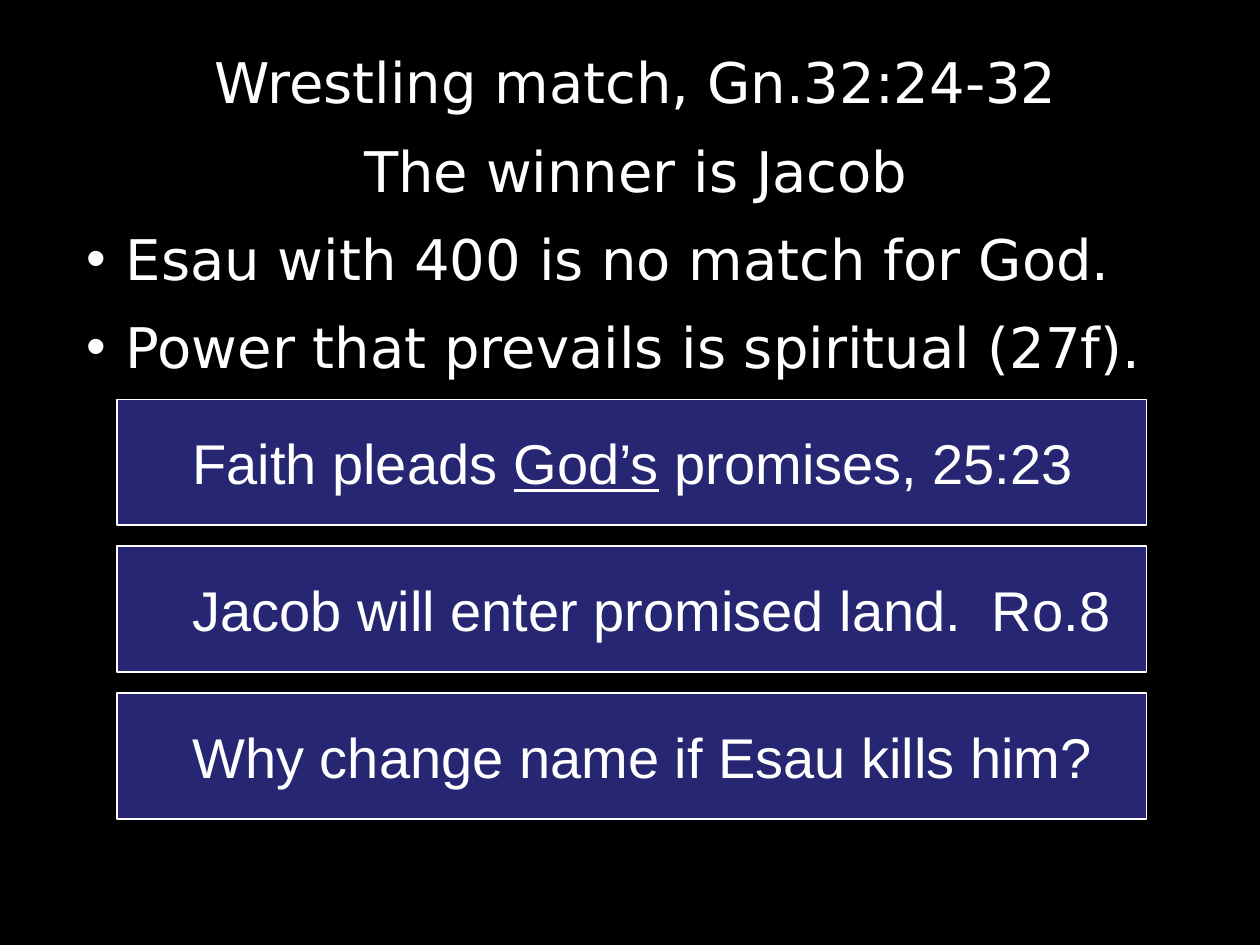
from pptx import Presentation, util as u
from pptx.dml.color import RGBColor
from pptx.enum import shapes, text
from lxml import etree

# Content: heading lines, bullets, and boxes as (words, underlined) runs
HEADINGS = ["Wrestling match, Gn.32:24-32", "The winner is Jacob"]
BULLETS = ["Esau with 400 is no match for God.",
           "Power that prevails is spiritual (27f)."]
BOXES = [
    [("Faith pleads ", False), ("God’s", True), (" promises, 25:23", False)],
    [("Jacob will enter promised land.  Ro.8", False)],
    [("Why change name if Esau kills him?", False)],
]

# Format
COLORS = {"back": "000000", "box": "262673", "ink": "FFFFFF"}
COLORS = {k: RGBColor.from_string(v) for k, v in COLORS.items()}
W, H = u.Inches(10), u.Inches(7.5)
BOX_LEFT, BOX_TOP, BOX_WIDTH = 0.93, 3.17, 8.17
BOX_HEIGHT, BOX_PITCH = 1, 3.5 / 3
SPACING = {"space_before": u.Pt(6), "space_after": u.Pt(6)}


def write(p, runs, font, align, margin, indent=0, bullet=None):
    for name, value in SPACING.items():
        setattr(p, name, value)
    p.alignment = align
    pPr = p._p.get_or_add_pPr()
    pPr.set("marL", str(u.Inches(margin)))
    pPr.set("indent", str(u.Inches(indent)))
    if bullet:
        ns = pPr.nsmap["a"]
        etree.SubElement(pPr, f"{{{ns}}}buFont", typeface="Arial")
        etree.SubElement(pPr, f"{{{ns}}}buChar", char=bullet)
    for words, underline in runs:
        r = p.add_run()
        r.text = words
        for name, value in {"name": font, "size": u.Pt(32),
                            "underline": underline}.items():
            setattr(r.font, name, value)
        r.font.color.rgb = COLORS["ink"]


prs = Presentation()
prs.slide_width, prs.slide_height = W, H
s = prs.slides.add_slide(prs.slide_layouts[6])
s.background.fill.solid()
s.background.fill.fore_color.rgb = COLORS["back"]

# Headings and bullets share one text box
sp = s.shapes.add_textbox(u.Inches(0.52), u.Inches(0.33),
                          int(W * 0.9), int(H * 0.9))
tf = sp.text_frame
tf.word_wrap = True
for i, line in enumerate(HEADINGS + BULLETS):
    p = tf.add_paragraph() if i else tf.paragraphs[0]
    if i < len(HEADINGS):
        write(p, [(line, False)], "DejaVu Sans", text.PP_ALIGN.CENTER, 0.06)
    else:
        write(p, [(line, False)], "DejaVu Sans", text.PP_ALIGN.LEFT,
              0.38, -0.31, "•")

# Stacked boxes
for i, runs in enumerate(BOXES):
    sp = s.shapes.add_shape(
        shapes.MSO_SHAPE.RECTANGLE, u.Inches(BOX_LEFT),
        u.Inches(BOX_TOP + i * BOX_PITCH),
        u.Inches(BOX_WIDTH), u.Inches(BOX_HEIGHT))
    sp.shadow.inherit = False
    sp.fill.solid()
    sp.fill.fore_color.rgb = COLORS["box"]
    sp.line.color.rgb = COLORS["ink"]
    sp.line.width = u.Pt(1)
    tf = sp.text_frame
    tf.word_wrap = True
    tf.vertical_anchor = text.MSO_ANCHOR.MIDDLE
    p = tf.paragraphs[0]
    p.level = 1
    write(p, runs, "Arial", text.PP_ALIGN.LEFT, 0.5)

prs.save("out.pptx")
